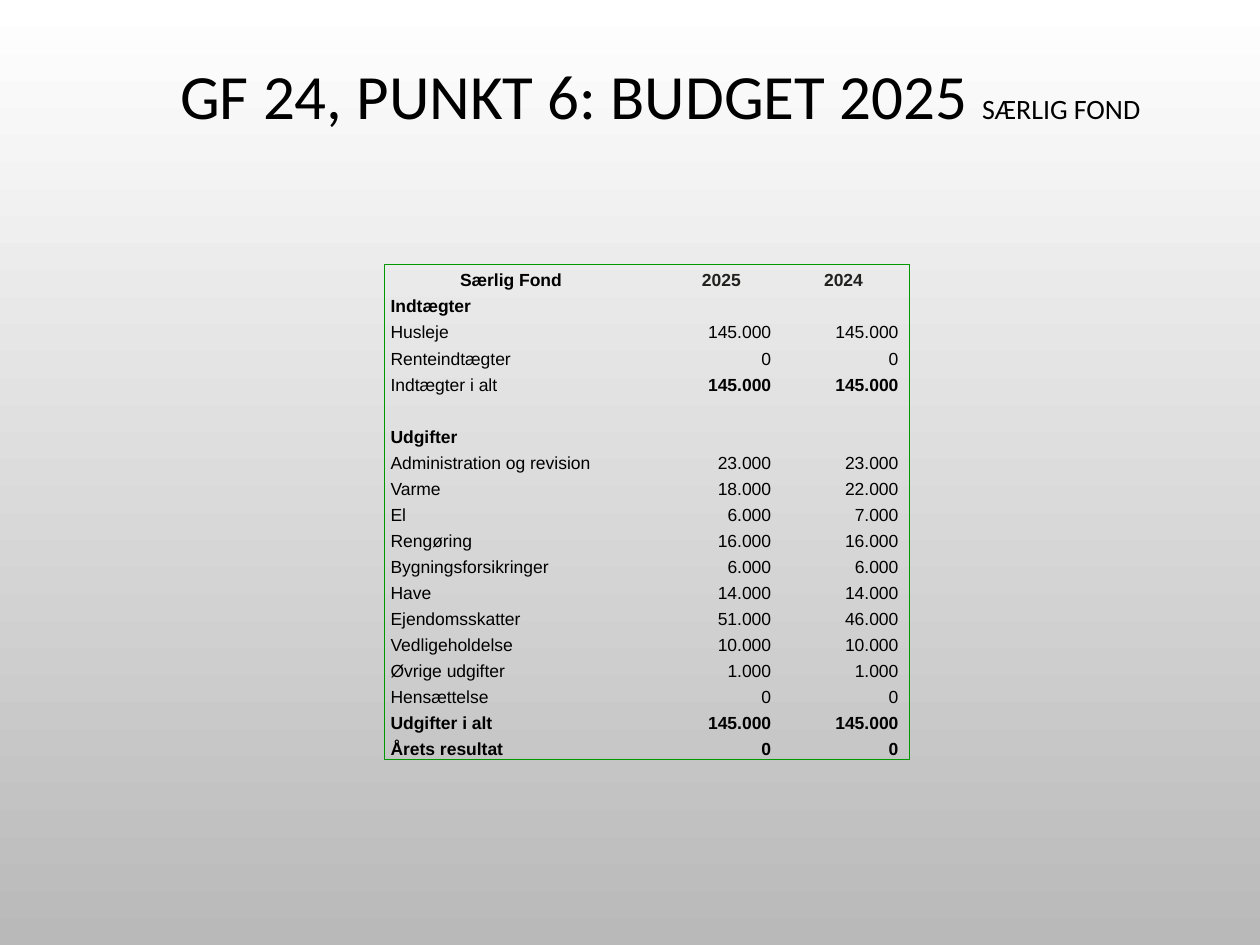
from dataclasses import dataclass

from lxml import etree
from pptx import Presentation
from pptx.dml.color import RGBColor
from pptx.enum.text import MSO_ANCHOR, PP_ALIGN
from pptx.oxml.ns import qn
from pptx.util import Inches, Pt

LEFT, CENTER, RIGHT = PP_ALIGN.LEFT, PP_ALIGN.CENTER, PP_ALIGN.RIGHT
MIDDLE, BOTTOM = MSO_ANCHOR.MIDDLE, MSO_ANCHOR.BOTTOM
TITLE_ONLY = 5
PLAIN_TABLE_STYLE = "{2D5ABB26-0587-4C30-8999-92F81FD0307C}"


@dataclass(frozen=True)
class Theme:
    """Colours, fonts and type sizes of the slide."""
    top: str = "FFFFFF"
    bottom: str = "B9B9B9"
    text: str = "000000"
    year: str = "212120"
    border: str = "009900"
    title_font: str = "Calibri"
    table_font: str = "Arial"
    title_size: int = 36
    subtitle_size: int = 16
    table_size: int = 10


THEME = Theme()
COLUMN_WIDTHS = (2.05, 0.18, 0.93, 1.01)
TABLE_HEIGHT = 3.93
HEADER = ("Særlig Fond", "2025", "2024")
BUDGET = (
    ("Indtægter", "", ""),
    ("Husleje", "145.000", "145.000"),
    ("Renteindtægter", "0", "0"),
    ("Indtægter i alt", "145.000", "145.000"),
    ("", "", ""),
    ("Udgifter", "", ""),
    ("Administration og revision", "23.000", "23.000"),
    ("Varme", "18.000", "22.000"),
    ("El", "6.000", "7.000"),
    ("Rengøring", "16.000", "16.000"),
    ("Bygningsforsikringer", "6.000", "6.000"),
    ("Have", "14.000", "14.000"),
    ("Ejendomsskatter", "51.000", "46.000"),
    ("Vedligeholdelse", "10.000", "10.000"),
    ("Øvrige udgifter", "1.000", "1.000"),
    ("Hensættelse", "0", "0"),
    ("Udgifter i alt", "145.000", "145.000"),
    ("Årets resultat", "0", "0"),
)
BOLD_LABELS = {"Indtægter", "Udgifter", "Udgifter i alt", "Årets resultat"}
BOLD_AMOUNTS = {"Indtægter i alt", "Udgifter i alt", "Årets resultat"}


def add_text(paragraph, text, *, size, font, color=THEME.text, bold=False):
    """Add a formatted run to a paragraph."""
    run = paragraph.add_run()
    run.text = text
    run.font.size = Pt(size)
    run.font.name = font
    run.font.bold = bold
    run.font.color.rgb = RGBColor.from_string(color)


def set_background(slide):
    """Fill the slide with a gradient from top to bottom."""
    fill = slide.background.fill
    fill.gradient()
    fill.gradient_angle = 270
    for stop, color in zip(fill.gradient_stops, (THEME.top, THEME.bottom)):
        stop.color.rgb = RGBColor.from_string(color)


def add_title(slide):
    """Place the title with its smaller ending."""
    title = slide.shapes.title
    title.left, title.top = Inches(0.67), Inches(0.25)
    title.width, title.height = Inches(9.14), Inches(1.08)
    title.text_frame.vertical_anchor = MIDDLE
    paragraph = title.text_frame.paragraphs[0]
    paragraph.alignment = CENTER
    paragraph.line_spacing = 0.9
    add_text(paragraph, "GF 24, PUNKT 6: BUDGET 2025 ",
             size=THEME.title_size, font=THEME.title_font)
    add_text(paragraph, "SÆRLIG FOND",
             size=THEME.subtitle_size, font=THEME.title_font)


def add_border(cell, side):
    """Draw one side of a cell, given as L, R, T or B."""
    properties = cell._tc.get_or_add_tcPr()
    line = etree.SubElement(properties, qn(f"a:ln{side}"), w=str(Pt(1)))
    fill = etree.SubElement(line, qn("a:solidFill"))
    etree.SubElement(fill, qn("a:srgbClr"), val=THEME.border)


def fill_cell(cell, text, *, alignment, color, bold):
    """Format a cell and write its text."""
    cell.fill.background()
    cell.vertical_anchor = BOTTOM
    cell.margin_left, cell.margin_right = Inches(0.05), Inches(0.09)
    cell.margin_top, cell.margin_bottom = Inches(0.01), 0
    paragraph = cell.text_frame.paragraphs[0]
    paragraph.alignment = alignment
    if text:
        paragraph.space_after = Pt(14)
        add_text(paragraph, text, size=THEME.table_size,
                 font=THEME.table_font, color=color, bold=bold)
    else:
        etree.SubElement(paragraph._p, qn("a:endParaRPr"),
                         sz=str(THEME.table_size * 100))


def cell_format(row, column, label):
    """Return the text format of a cell from its place and row label."""
    if row == 0:
        color = THEME.year if column else THEME.text
        return {"alignment": CENTER, "color": color, "bold": True}
    bold_rows = BOLD_AMOUNTS if column else BOLD_LABELS
    return {"alignment": RIGHT if column else LEFT,
            "color": THEME.text, "bold": label in bold_rows}


def add_budget_table(slide):
    """Add the budget table with a frame around it."""
    rows = (HEADER,) + BUDGET
    last_row, last_column = len(rows) - 1, len(COLUMN_WIDTHS) - 1
    frame = slide.shapes.add_table(
        len(rows), len(COLUMN_WIDTHS), Inches(3.05), Inches(2.1),
        Inches(sum(COLUMN_WIDTHS)), Inches(TABLE_HEIGHT))
    table = frame.table
    table.first_row = table.horz_banding = False
    table._tbl.tblPr.find(qn("a:tableStyleId")).text = PLAIN_TABLE_STYLE
    for column, width in zip(table.columns, COLUMN_WIDTHS):
        column.width = Inches(width)
    for row, (label, *amounts) in enumerate(rows):
        table.rows[row].height = Inches(TABLE_HEIGHT / len(rows))
        for column, text in enumerate((label, "", *amounts)):
            cell = table.cell(row, column)
            edges = {"L": column == 0, "R": column == last_column,
                     "T": row == 0, "B": row == last_row}
            for side, is_edge in edges.items():
                if is_edge:
                    add_border(cell, side)
            fill_cell(cell, text, **cell_format(row, column, label))


def main():
    """Build and save the budget slide."""
    presentation = Presentation()
    presentation.slide_width = Inches(10)
    presentation.slide_height = Inches(7.5)
    slide = presentation.slides.add_slide(presentation.slide_layouts[TITLE_ONLY])
    set_background(slide)
    add_title(slide)
    add_budget_table(slide)
    presentation.save("out.pptx")


if __name__ == "__main__":
    main()
